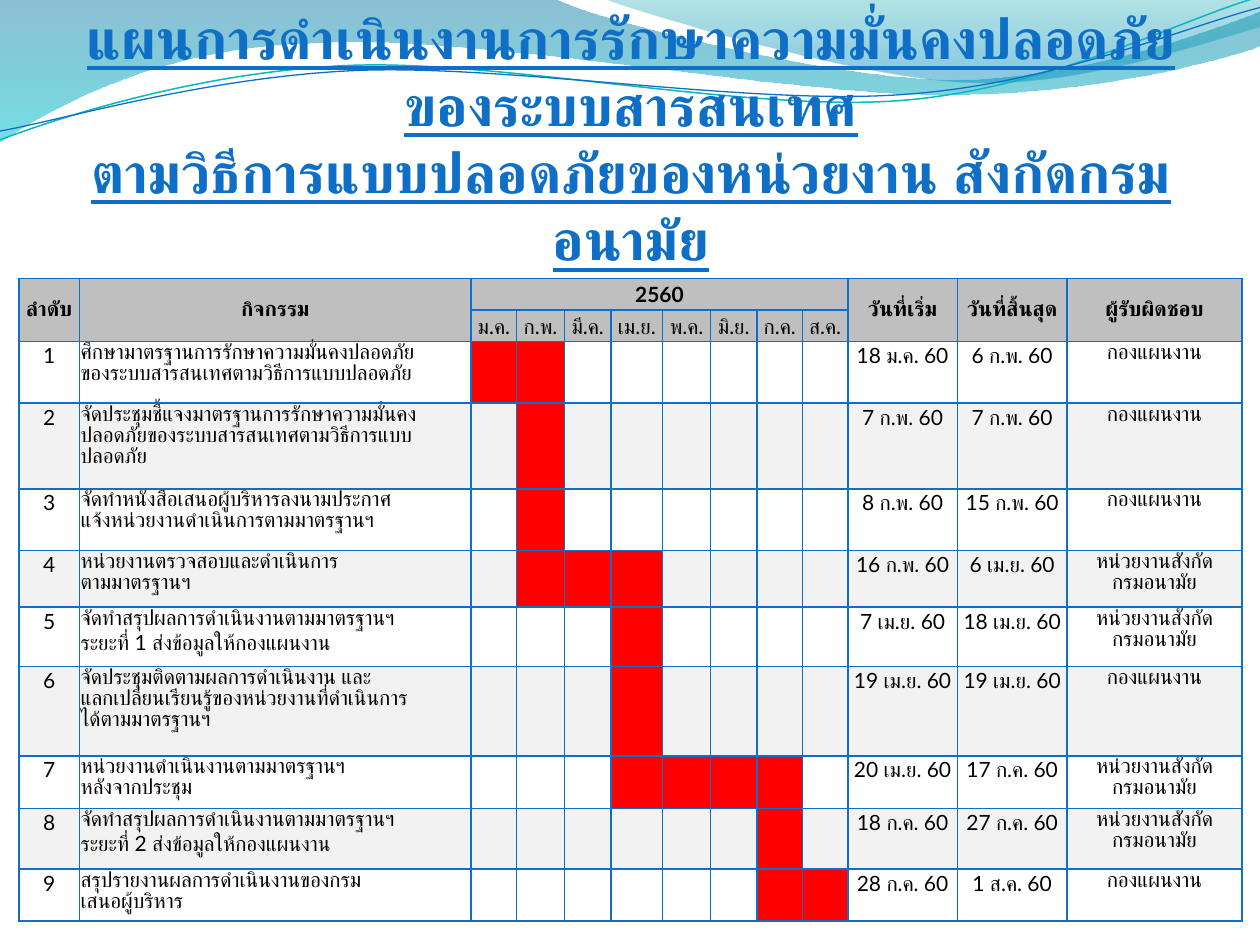
"""Build the 2560 information-security work plan slide with its Gantt table."""
import pptx
import pptx.util
import pptx.dml.color
import pptx.enum.text
import pptx.oxml
import pptx.oxml.ns
import lxml.etree

Inches, Pt = pptx.util.Inches, pptx.util.Pt
ALIGN, ANCHOR = pptx.enum.text.PP_ALIGN, pptx.enum.text.MSO_ANCHOR
qn = pptx.oxml.ns.qn
BLUE, GREY, BAND, RED, WHITE = "0F6FC6", "BFBFBF", "F2F2F2", "FF0000", "FFFFFF"


def rgb(value):
    return pptx.dml.color.RGBColor.from_string(value)


def add_text(p, text, font, size, color, bold=False, underline=False):
    r = p.add_run()
    r.text = text
    r.font.name, r.font.size = font, Pt(size)
    r.font.bold, r.font.underline = bold, underline
    r.font.color.rgb = rgb(color)


prs = pptx.Presentation()
prs.slide_width, prs.slide_height = Inches(10), Inches(7.5)
s = prs.slides.add_slide(prs.slide_layouts[6])

left_wave = [
    (0, 0), (4.4, -0.01),
    (4.76, 0.17, 6.64, 0.63, 7.58, 0.63), (8.53, 0.63, 9.58, 0.26, 10, 0.09),
    (10.01, 0.36),
    (9.83, 0.44, 8.7, 0.76, 7.46, 0.75), (6.22, 0.75, 3.82, 0.28, 2.57, 0.34),
    (1.29, 0.36, 0.46, 0.83, -0.01, 1.13), (0, 0),
]
right_wave = [
    (4.79, -0.01),
    (5.09, 0.11, 6.82, 0.62, 7.69, 0.65), (8.56, 0.69, 9.61, 0.32, 10, 0.21),
    (10, 0), (4.79, -0.01),
]
teal_line = [
    (0, 1.11),
    (0.48, 0.93, 1.58, 0.57, 2.77, 0.52), (3.95, 0.47, 5.93, 0.89, 7.13, 0.8),
    (8.33, 0.71, 9.38, 0.15, 9.98, -0.02),
]
blue_line = [
    (0, 1.04),
    (0.47, 0.96, 1.64, 0.61, 2.83, 0.56), (4.03, 0.51, 5.97, 0.84, 7.17, 0.75),
    (8.36, 0.67, 9.41, 0.21, 10, 0.06),
]
waves = [
    (left_wave, [(0, "0074A1", 45), (1, "00C6CF", 55)], None),
    (right_wave, [(0, "00A1A9", 30), (0.8, "008BBF", 45)], None),
    (teal_line, None, ("0AB8BF", 0.85)),
    (blue_line, None, (BLUE, 0.75)),
]
for segments, stops, line in waves:
    points = [(Inches(seg[i]), Inches(seg[i + 1])) for seg in segments for i in range(0, len(seg), 2)]
    fb = s.shapes.build_freeform(*points[0])
    fb.add_line_segments(points[1:], close=stops is not None)
    sp = fb.convert_to_shape()
    sp.shadow.inherit = False
    steps = iter(list(sp._element.iter(qn("a:lnTo"))))
    for seg in segments[1:]:
        step = next(steps)
        if len(seg) == 6:
            curve = lxml.etree.Element(qn("a:cubicBezTo"))
            step.addprevious(curve)
            for old in (step, next(steps), next(steps)):
                curve.append(old[0])
                old.getparent().remove(old)
    if stops:
        sp.line.fill.background()
        sp.fill.gradient()
        sp.fill.gradient_angle = 270
        for stop, (position, color, opacity) in zip(sp.fill.gradient_stops, stops):
            stop.position = position
            stop.color.rgb = rgb(color)
        for clr, (_, _, opacity) in zip(sp._element.spPr.iter(qn("a:srgbClr")), stops):
            lxml.etree.SubElement(clr, qn("a:alpha")).set("val", str(opacity * 1000))
    else:
        sp.fill.background()
        sp.line.color.rgb, sp.line.width = rgb(line[0]), Pt(line[1])

sp = s.shapes.add_textbox(Inches(0.51), Inches(1.15), Inches(9), Inches(1.01))
tf = sp.text_frame
tf.word_wrap = True
tf.vertical_anchor = ANCHOR.BOTTOM
tf.margin_left = tf.margin_right = tf.margin_bottom = 0
p = tf.paragraphs[0]
p.alignment = ALIGN.CENTER
add_text(p, "แผนการดำเนินงานการรักษาความมั่นคงปลอดภัยของระบบสารสนเทศ", "Calibri", 32, BLUE, True, True)
p.add_line_break()
add_text(p, "ตามวิธีการแบบปลอดภัยของหน่วยงาน สังกัดกรมอนามัย", "Calibri", 32, BLUE, True, True)

months = ["ม.ค.", "ก.พ.", "มี.ค.", "เม.ย.", "พ.ค.", "มิ.ย.", "ก.ค.", "ส.ค."]
planning, units = "กองแผนงาน", "หน่วยงานสังกัด\nกรมอนามัย"
tasks = [
    ("ศึกษามาตรฐานการรักษาความมั่นคงปลอดภัย\nของระบบสารสนเทศตามวิธีการแบบปลอดภัย", 0, 1, "18 ม.ค. 60", "6 ก.พ. 60", planning),
    ("จัดประชุมชี้แจงมาตรฐานการรักษาความมั่นคง\nปลอดภัยของระบบสารสนเทศตามวิธีการแบบ\nปลอดภัย", 1, 1, "7 ก.พ. 60", "7 ก.พ. 60", planning),
    ("จัดทำหนังสือเสนอผู้บริหารลงนามประกาศ\nแจ้งหน่วยงานดำเนินการตามมาตรฐานฯ", 1, 1, "8 ก.พ. 60", "15 ก.พ. 60", planning),
    ("หน่วยงานตรวจสอบและดำเนินการ\nตามมาตรฐานฯ", 1, 3, "16 ก.พ. 60", "6 เม.ย. 60", units),
    ("จัดทำสรุปผลการดำเนินงานตามมาตรฐานฯ\nระยะที่ 1 ส่งข้อมูลให้กองแผนงาน", 3, 3, "7 เม.ย. 60", "18 เม.ย. 60", units),
    ("จัดประชุมติดตามผลการดำเนินงาน และ\nแลกเปลี่ยนเรียนรู้ของหน่วยงานที่ดำเนินการ\nได้ตามมาตรฐานฯ", 3, 3, "19 เม.ย. 60", "19 เม.ย. 60", planning),
    ("หน่วยงานดำเนินงานตามมาตรฐานฯ\nหลังจากประชุม", 3, 6, "20 เม.ย. 60", "17 ก.ค. 60", units),
    ("จัดทำสรุปผลการดำเนินงานตามมาตรฐานฯ\nระยะที่ 2 ส่งข้อมูลให้กองแผนงาน", 6, 6, "18 ก.ค. 60", "27 ก.ค. 60", units),
    ("สรุปรายงานผลการดำเนินงานของกรม\nเสนอผู้บริหาร", 6, 7, "28 ก.ค. 60", "1 ส.ค. 60", planning),
]
blank = [""] * len(months)
rows = [
    ["ลำดับ", "กิจกรรม", "2560"] + blank[1:] + ["วันที่เริ่ม", "วันที่สิ้นสุด", "ผู้รับผิดชอบ"],
    ["", ""] + months + ["", "", ""],
]
for number, (activity, first, last, start, end, owner) in enumerate(tasks, 1):
    rows.append([str(number), activity] + blank + [start, end, owner])

widths = [0.48, 3.11, 0.36, 0.38, 0.37, 0.41, 0.38, 0.37, 0.36, 0.36, 0.87, 0.87, 1.39]
heights = [0.25, 0.25, 0.49, 0.68, 0.49, 0.45, 0.47, 0.71, 0.42, 0.48, 0.4]
table = s.shapes.add_table(len(rows), len(widths), Inches(0.15), Inches(2.21), Inches(9.7), Inches(5.1)).table
table.first_row = table.horz_banding = False
for column, width in zip(table.columns, widths):
    column.width = Inches(width)
for row, height in zip(table.rows, heights):
    row.height = Inches(height)

for i, values in enumerate(rows):
    for j, value in enumerate(values):
        cell = table.cell(i, j)
        cell.margin_left = cell.margin_right = cell.margin_top = Inches(0.01)
        cell.margin_bottom = 0
        cell.vertical_anchor = ANCHOR.MIDDLE if i < 2 else ANCHOR.TOP
        color = GREY if i < 2 else BAND if i % 2 else WHITE
        if i >= 2 and tasks[i - 2][1] <= j - 2 <= tasks[i - 2][2]:
            color = RED
        tcPr = cell._tc.get_or_add_tcPr()
        for side in ("a:lnL", "a:lnR", "a:lnT", "a:lnB"):
            ln = lxml.etree.SubElement(tcPr, qn(side), w=str(Pt(1)))
            fill = lxml.etree.SubElement(ln, qn("a:solidFill"))
            lxml.etree.SubElement(fill, qn("a:srgbClr"), val=BLUE)
        cell.fill.solid()
        cell.fill.fore_color.rgb = rgb(color)
        tf = cell.text_frame
        for k, text in enumerate(value.split("\n")):
            p = tf.add_paragraph() if k else tf.paragraphs[0]
            p.alignment = ALIGN.LEFT if j == 1 and i >= 2 else ALIGN.CENTER
            if text:
                add_text(p, text, "Lato", 12, "000000", bold=i == 0)
            else:
                lxml.etree.SubElement(p._p, qn("a:endParaRPr"), sz="1200")

table.cell(0, 2).merge(table.cell(0, 9))
for j in (0, 1, 10, 11, 12):
    table.cell(0, j).merge(table.cell(1, j))

prs.save("out.pptx")
